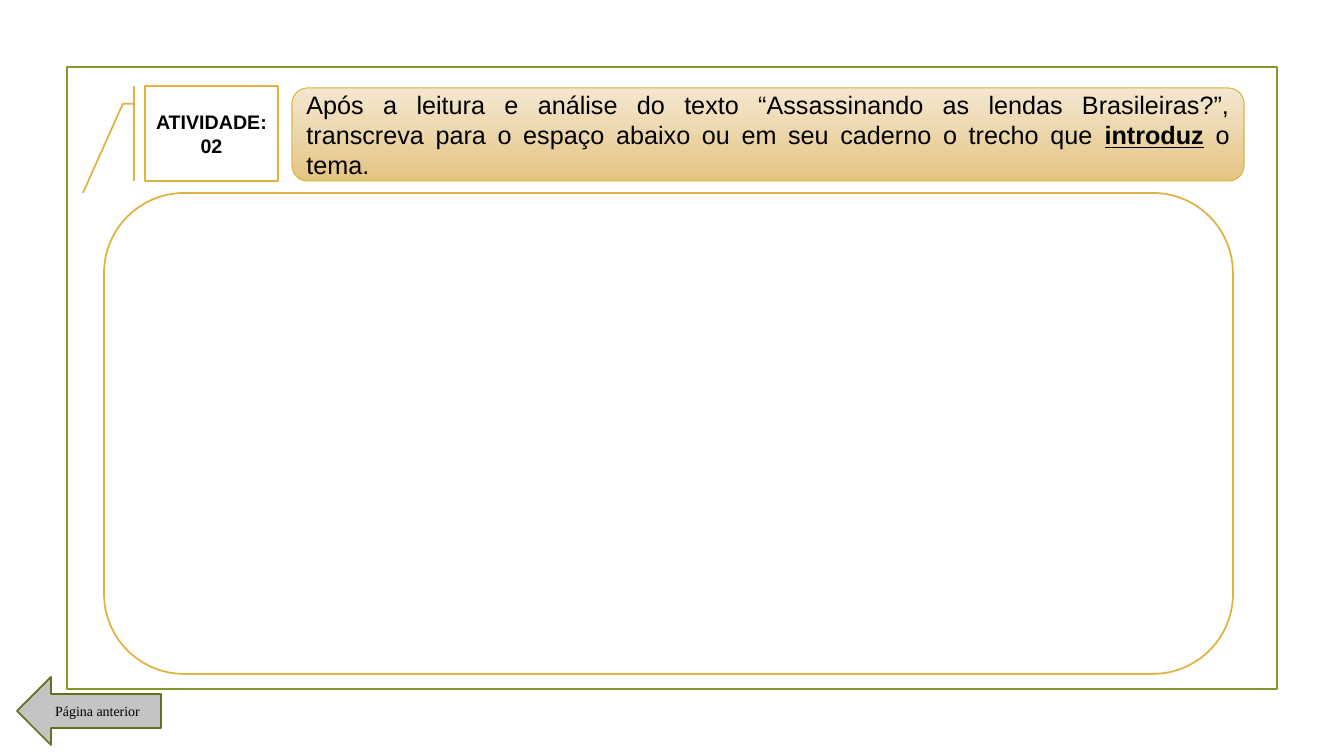
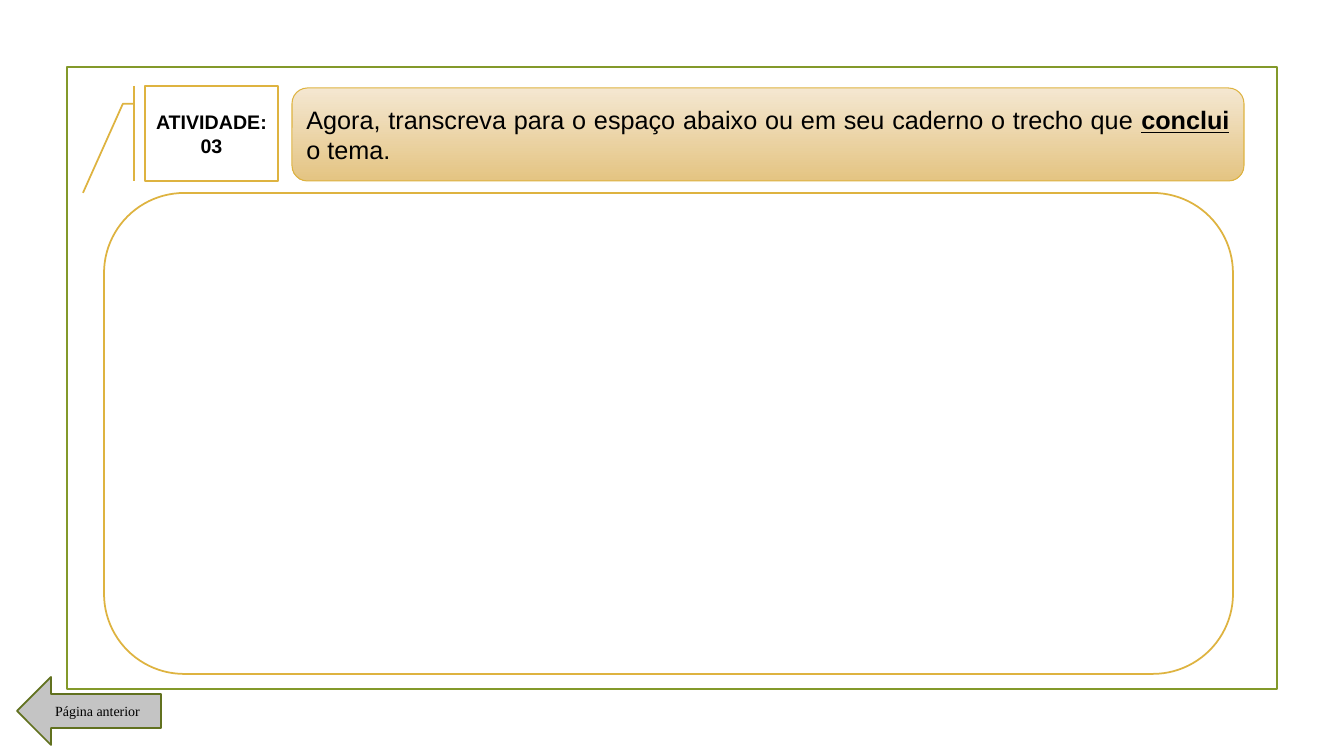
from pptx import Presentation
from pptx.dml.color import RGBColor
from pptx.enum.shapes import MSO_SHAPE
from pptx.enum.text import MSO_ANCHOR, PP_ALIGN
from pptx.util import Emu, Pt

RECTANGLE = MSO_SHAPE.RECTANGLE
ROUNDED = MSO_SHAPE.ROUNDED_RECTANGLE
LEFT_ARROW = MSO_SHAPE.LEFT_ARROW
CALLOUT = MSO_SHAPE.LINE_CALLOUT_2_BORDER_AND_ACCENT_BAR
CENTER, JUSTIFY = PP_ALIGN.CENTER, PP_ALIGN.JUSTIFY
MIDDLE = MSO_ANCHOR.MIDDLE

# Content: activity label, then instruction before, at and after the key word
ACTIVITIES = [
    ("ATIVIDADE: 02",
     ("Após a leitura e análise do texto “Assassinando as lendas Brasileiras?”, "
      "transcreva para o espaço abaixo ou em seu caderno o trecho que ",
      "introduz", " o tema.")),
    ("ATIVIDADE: 03",
     ("Agora, transcreva para o espaço abaixo ou em seu caderno o trecho que ",
      "conclui", " o tema.")),
]
BACK_LABEL = "Página anterior"

# Shared style
GOLD, GREEN, DARK_GREEN = "DEB340", "83992A", "61711F"
SAND_LIGHT, SAND_DARK = "F4E7D1", "E4C482"
WHITE, GRAY, BLACK = "FFFFFF", "C4C4C4", "000000"
BODY_FONT, BUTTON_FONT = "Arial", "Times New Roman"

# Places in px: left, top, width, height
SLIDE_SIZE = (1344, 756)
FRAME = (67, 67, 1210, 622)
BACK_BUTTON = (17, 677, 144, 68)
INSTRUCTION = (292, 88, 952, 93)
LABEL = (145, 86, 133, 95)
ANSWER = (104, 193, 1129, 481)


def px(length):
    return Emu(round(length * 914400 / 100.8))


def rgb(color):
    return RGBColor.from_string(color)


def add_box(slide, kind, place, line, fill=None, weight=1.25):
    box = slide.shapes.add_shape(kind, *map(px, place))
    box.shadow.inherit = False
    box.line.color.rgb = rgb(line)
    box.line.width = Pt(weight)
    if fill:
        box.fill.solid()
        box.fill.fore_color.rgb = rgb(fill)
    else:
        box.fill.background()
    return box


def write(box, texts, size, font=BODY_FONT, bold=None, align=CENTER):
    """Write the texts as runs of one paragraph and return the runs."""
    frame = box.text_frame
    frame.word_wrap = True
    frame.vertical_anchor = MIDDLE
    paragraph = frame.paragraphs[0]
    runs = []
    for text in texts:
        run = paragraph.add_run()
        run.text = text
        runs.append(run)
    paragraph.alignment = align
    paragraph.font.name = font
    paragraph.font.size = Pt(size)
    paragraph.font.bold = bold
    paragraph.font.color.rgb = rgb(BLACK)
    return runs


def add_instruction(slide, texts):
    banner = add_box(slide, ROUNDED, INSTRUCTION, GOLD, weight=0.75)
    banner.fill.gradient()
    banner.fill.gradient_angle = 270  # light at the top, dark at the bottom
    for stop, color in zip(banner.fill.gradient_stops, (SAND_LIGHT, SAND_DARK)):
        stop.color.rgb = rgb(color)
    key_word = write(banner, texts, 18, align=JUSTIFY)[1]
    key_word.font.bold = True
    key_word.font.underline = True


def add_activity(prs, layout, label, instruction):
    slide = prs.slides.add_slide(layout)
    back = add_box(slide, LEFT_ARROW, BACK_BUTTON, DARK_GREEN, GRAY)
    write(back, [BACK_LABEL], 10, font=BUTTON_FONT)
    add_instruction(slide, instruction)
    write(add_box(slide, CALLOUT, LABEL, GOLD, WHITE), [label], 14, bold=True)
    add_box(slide, ROUNDED, ANSWER, GOLD, WHITE)
    return slide


def main():
    prs = Presentation()
    prs.slide_width, prs.slide_height = map(px, SLIDE_SIZE)
    layout = prs.slide_layouts[6]
    slides = [add_activity(prs, layout, *activity) for activity in ACTIVITIES]

    # The green frame lives on the layout, behind every slide
    frame = add_box(slides[0], RECTANGLE, FRAME, GREEN)
    layout.shapes.element.append(frame.element)

    prs.save("out.pptx")


if __name__ == "__main__":
    main()
